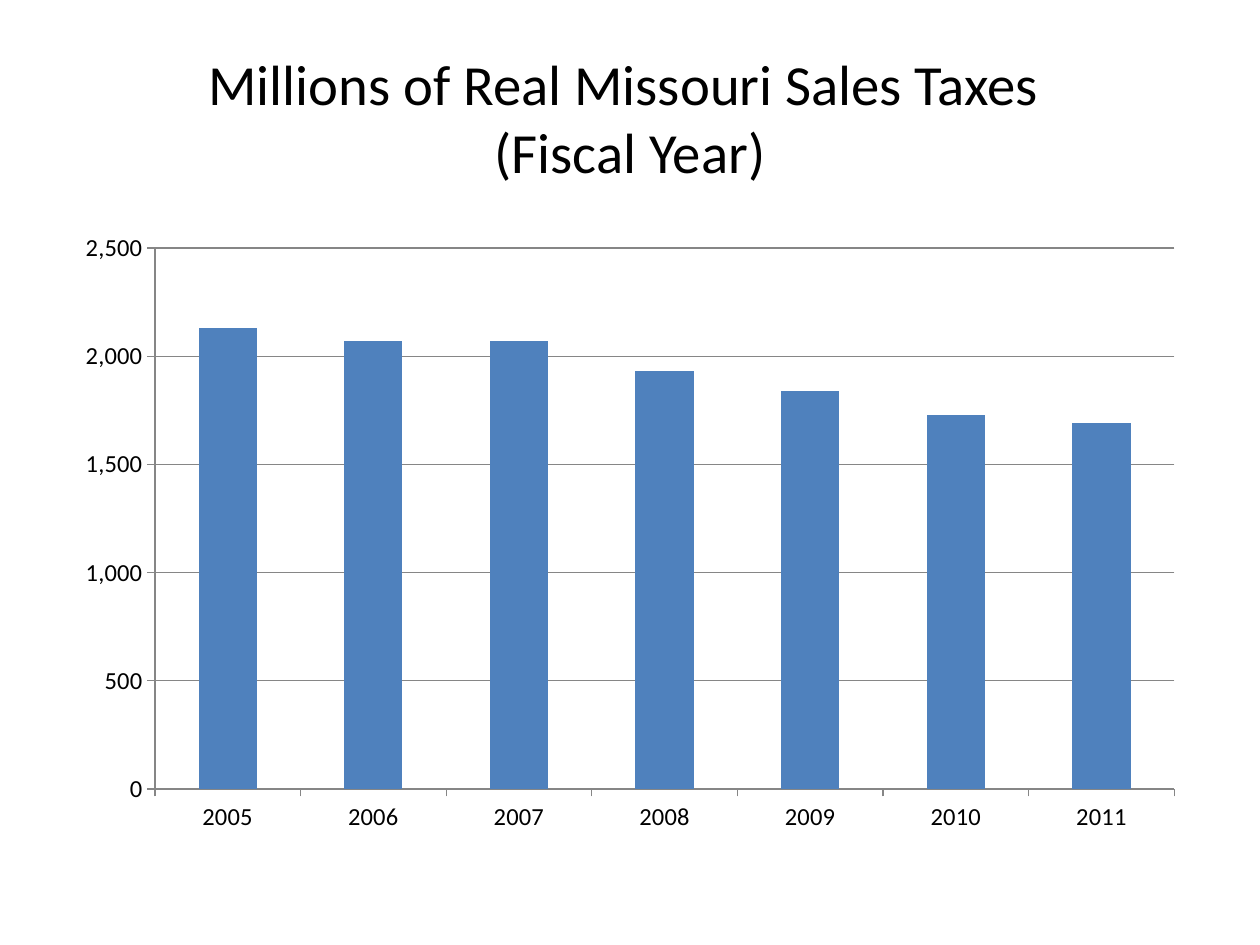
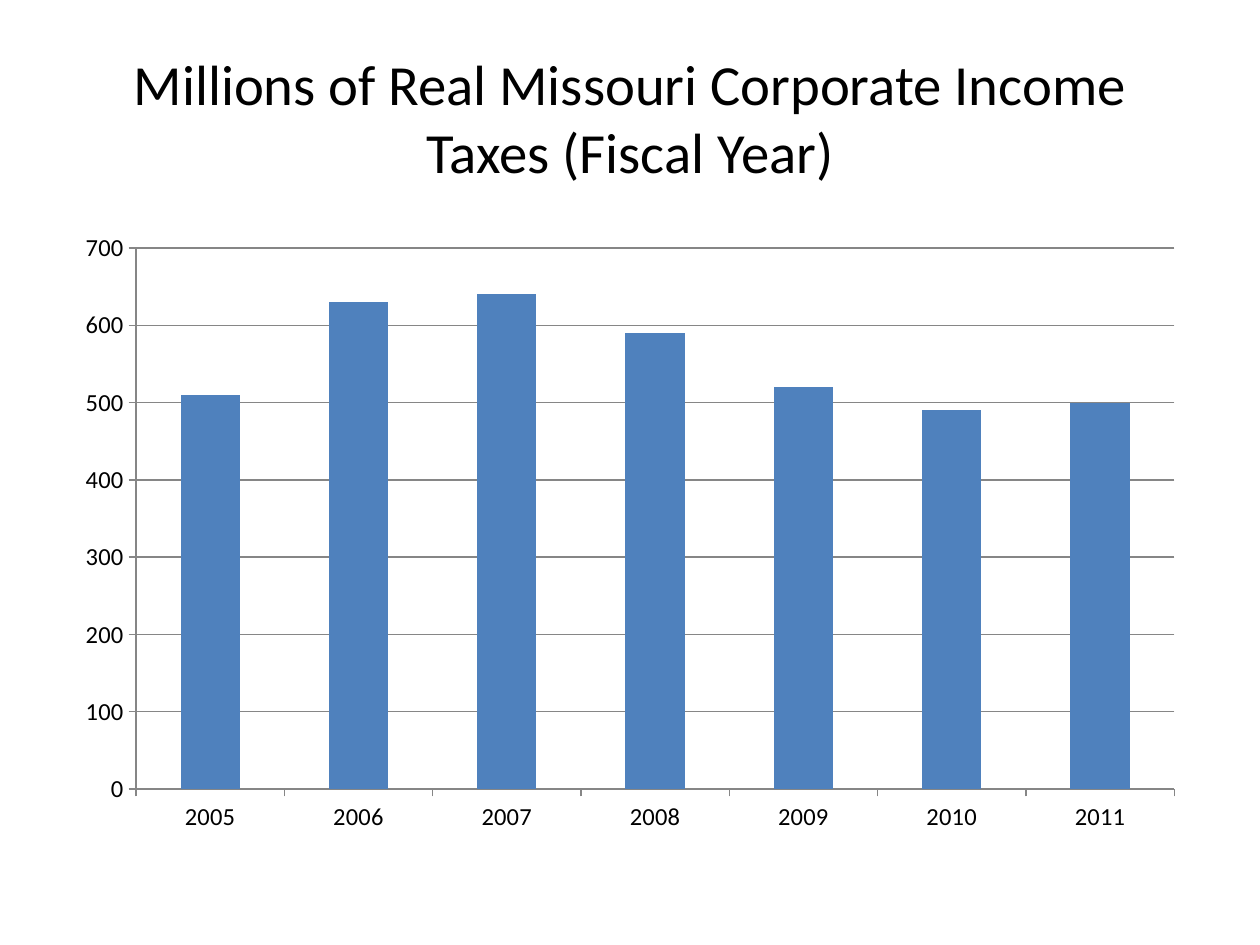
import pptx
import pptx.chart.data
import pptx.dml.color
import pptx.enum.chart
import pptx.enum.text
import pptx.util

Pt = pptx.util.Pt
BLACK = pptx.dml.color.RGBColor(0x00, 0x00, 0x00)
GRAY = pptx.dml.color.RGBColor(0x86, 0x86, 0x86)
BLUE = pptx.dml.color.RGBColor(0x4F, 0x81, 0xBD)
FONT = "Calibri"
LEFT, WIDTH = Pt(36), Pt(648)

YEARS = [str(year) for year in range(2005, 2012)]
SALES_TAXES = [2130, 2070, 2070, 1930, 1840, 1730, 1690]
CORPORATE_TAXES = [510, 630, 640, 590, 520, 490, 500]


def style_font(font, size):
    font.name = FONT
    font.size = Pt(size)
    font.color.rgb = BLACK


def add_title(s, lines):
    """Add a centred title; each item of lines starts after a line break."""
    tf = s.shapes.add_textbox(LEFT, Pt(21.6), WIDTH, Pt(90)).text_frame
    tf.word_wrap = True
    tf.vertical_anchor = pptx.enum.text.MSO_ANCHOR.MIDDLE
    p = tf.paragraphs[0]
    p.alignment = pptx.enum.text.PP_ALIGN.CENTER
    for i, line in enumerate(lines):
        if i:
            p.add_line_break()
        r = p.add_run()
        r.text = line
        style_font(r.font, 32.4)


def style_line(line):
    line.color.rgb = GRAY
    line.width = Pt(0.75)


def add_tax_chart(s, values, top, step):
    """Add yearly columns on a value axis from 0 to top, marked every step."""
    data = pptx.chart.data.CategoryChartData()
    data.categories = YEARS
    data.add_series("Series 1", values)
    chart = s.shapes.add_chart(
        pptx.enum.chart.XL_CHART_TYPE.COLUMN_CLUSTERED,
        LEFT, Pt(126), WIDTH, Pt(356.4), data).chart
    chart.has_legend = False
    chart.has_title = False
    style_font(chart.font, 14)

    plot = chart.plots[0]
    plot.vary_by_categories = False
    plot.gap_width = 150
    fill = plot.series[0].format.fill
    fill.solid()
    fill.fore_color.rgb = BLUE

    for axis in (chart.category_axis, chart.value_axis):
        axis.major_tick_mark = pptx.enum.chart.XL_TICK_MARK.OUTSIDE
        axis.minor_tick_mark = pptx.enum.chart.XL_TICK_MARK.NONE
        style_line(axis.format.line)

    axis = chart.value_axis
    axis.minimum_scale = 0
    axis.maximum_scale = top
    axis.major_unit = step
    axis.has_major_gridlines = True
    style_line(axis.major_gridlines.format.line)
    axis.tick_labels.number_format = "#,##0"
    axis.tick_labels.number_format_is_linked = False


def add_tax_slide(prs, title, values, top, step):
    s = prs.slides.add_slide(prs.slide_layouts[6])
    add_title(s, title)
    add_tax_chart(s, values, top, step)


def main():
    prs = pptx.Presentation()
    prs.slide_width, prs.slide_height = Pt(720), Pt(540)
    add_tax_slide(prs, ["Millions of Real Missouri Sales Taxes ", "(Fiscal Year)"],
                  SALES_TAXES, 2500, 500)
    add_tax_slide(prs, ["Millions of Real Missouri Corporate Income Taxes (Fiscal Year)"],
                  CORPORATE_TAXES, 700, 100)
    prs.save("out.pptx")


if __name__ == "__main__":
    main()
